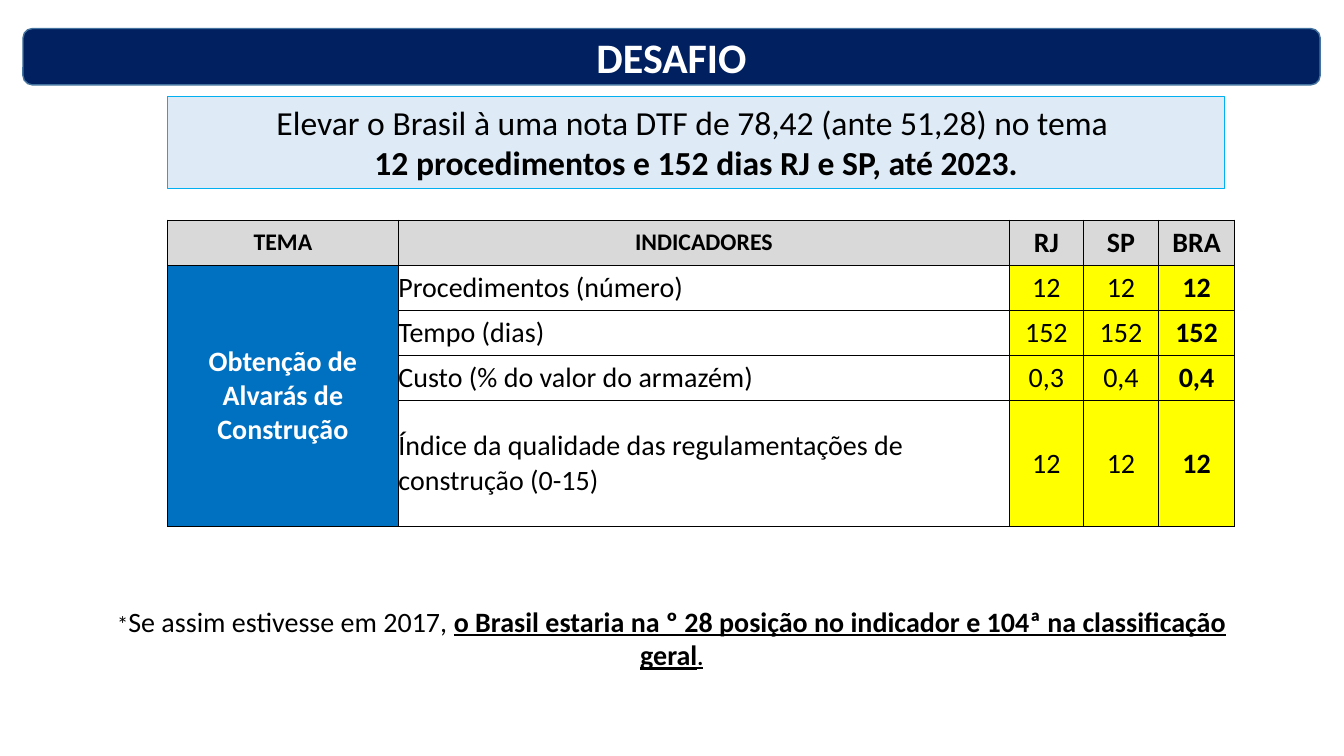
from lxml import etree
from pptx import Presentation
from pptx.dml.color import RGBColor
from pptx.enum import shapes, text
from pptx.oxml.ns import qn
from pptx.util import Cm, Pt

FONT = "Calibri"
BLACK = RGBColor(0x00, 0x00, 0x00)
WHITE = RGBColor(0xFF, 0xFF, 0xFF)
NAVY = RGBColor(0x00, 0x20, 0x60)
STEEL = RGBColor(0x43, 0x73, 0x9E)
PALE_BLUE = RGBColor(0xDE, 0xEB, 0xF7)
SKY = RGBColor(0x00, 0xB0, 0xF0)
BLUE = RGBColor(0x00, 0x70, 0xC0)
GREY = RGBColor(0xD9, 0xD9, 0xD9)
YELLOW = RGBColor(0xFF, 0xFF, 0x00)

COLUMN_WIDTHS = (5.82, 15.4, 1.86, 1.9, 1.91)
ROW_HEIGHTS = (1.14, 1.14, 1.14, 1.14, 3.17)
HEADINGS = ("TEMA", "INDICADORES", "RJ", "SP", "BRA")
THEME = "Obtenção de Alvarás de Construção"
INDICATORS = (
    ("Procedimentos (número)", "12", "12", "12"),
    ("Tempo (dias)", "152", "152", "152"),
    ("Custo (% do valor do armazém)", "0,3", "0,4", "0,4"),
    ("Índice da qualidade das regulamentações de construção (0-15)", "12", "12", "12"),
)


def add_run(paragraph, words, size, color=BLACK, bold=False, underline=False):
    run = paragraph.add_run()
    run.text = words
    font = run.font
    font.name, font.size, font.bold = FONT, Pt(size), bold
    font.color.rgb = color
    if underline:
        font.underline = True


def add_panel(slide, box, preset, fill, line=None, line_width=1):
    panel = slide.shapes.add_shape(preset, *map(Cm, box))
    panel.shadow.inherit = False
    panel.fill.solid()
    panel.fill.fore_color.rgb = fill
    if line is None:
        panel.line.fill.background()
    else:
        panel.line.color.rgb = line
        panel.line.width = Pt(line_width)
    panel.text_frame.word_wrap = True
    return panel


def add_banner(slide, box):
    """Draw the rounded bar and set the slide title in front of it."""
    bar = add_panel(slide, box, shapes.MSO_SHAPE.ROUNDED_RECTANGLE, NAVY, STEEL)
    title = slide.shapes.title
    bar._element.addnext(title._element)
    title.left, title.top, title.width, title.height = map(Cm, box)
    frame = title.text_frame
    frame.auto_size = text.MSO_AUTO_SIZE.NONE
    frame.vertical_anchor = text.MSO_ANCHOR.MIDDLE
    frame.margin_top = frame.margin_bottom = 0
    heading = frame.paragraphs[0]
    heading.alignment = text.PP_ALIGN.CENTER
    add_run(heading, "DESAFIO", 30, WHITE, bold=True)


def add_goal(slide, box):
    goal = add_panel(slide, box, shapes.MSO_SHAPE.RECTANGLE, PALE_BLUE, SKY, 0.75)
    frame = goal.text_frame
    frame.vertical_anchor = text.MSO_ANCHOR.TOP
    score, target = frame.paragraphs[0], frame.add_paragraph()
    score.alignment = target.alignment = text.PP_ALIGN.CENTER
    add_run(score, "Elevar o Brasil à uma nota DTF de 78,42 (ante 51,28) no tema ", 24)
    add_run(target, "12 procedimentos e 152 dias RJ e SP, até 2023.", 24, bold=True)


def set_borders(cell):
    properties = cell._tc.get_or_add_tcPr()
    for side in ("a:lnL", "a:lnR", "a:lnT", "a:lnB"):
        border = etree.SubElement(properties, qn(side), w=str(Pt(0.5)))
        fill = etree.SubElement(border, qn("a:solidFill"))
        etree.SubElement(fill, qn("a:srgbClr"), val=str(BLACK))


def fill_cell(cell, words, size=20, color=BLACK, bold=False, fill=None,
              align=text.PP_ALIGN.CENTER):
    cell.margin_left = cell.margin_right = cell.margin_top = cell.margin_bottom = 0
    cell.vertical_anchor = text.MSO_ANCHOR.MIDDLE
    set_borders(cell)
    if fill is None:
        cell.fill.background()
    else:
        cell.fill.solid()
        cell.fill.fore_color.rgb = fill
    if words:
        paragraph = cell.text_frame.paragraphs[0]
        paragraph.alignment = align
        add_run(paragraph, words, size, color, bold)


def add_indicators(slide, left, top):
    table = slide.shapes.add_table(
        len(ROW_HEIGHTS), len(COLUMN_WIDTHS), Cm(left), Cm(top),
        Cm(sum(COLUMN_WIDTHS)), Cm(sum(ROW_HEIGHTS))).table
    table.first_row = table.horz_banding = False
    for column, width in zip(table.columns, COLUMN_WIDTHS):
        column.width = Cm(width)
    for row, height in zip(table.rows, ROW_HEIGHTS):
        row.height = Cm(height)

    for c, heading in enumerate(HEADINGS):
        fill_cell(table.cell(0, c), heading, 17 if c < 2 else 20, bold=True, fill=GREY)
    for r, (indicator, *values) in enumerate(INDICATORS, 1):
        fill_cell(table.cell(r, 0), THEME if r == 1 else "", color=WHITE, bold=True, fill=BLUE)
        fill_cell(table.cell(r, 1), indicator, align=text.PP_ALIGN.LEFT)
        for c, value in enumerate(values, 2):
            fill_cell(table.cell(r, c), value, bold=HEADINGS[c] == "BRA", fill=YELLOW)
    table.cell(1, 0).merge(table.cell(len(INDICATORS), 0))


def add_footnote(slide, box):
    note = add_panel(slide, box, shapes.MSO_SHAPE.RECTANGLE, WHITE)
    note.text_frame.vertical_anchor = text.MSO_ANCHOR.TOP
    paragraph = note.text_frame.paragraphs[0]
    paragraph.alignment = text.PP_ALIGN.CENTER
    add_run(paragraph, "*", 16)
    add_run(paragraph, "Se assim estivesse em 2017, ", 20)
    add_run(paragraph, "o Brasil estaria na º 28 posição no indicador e 104ª "
            "na classificação geral", 20, bold=True, underline=True)
    add_run(paragraph, ".", 16, bold=True, underline=True)


def main():
    deck = Presentation()
    deck.slide_width, deck.slide_height = Cm(33.87), Cm(19.05)
    slide = deck.slides.add_slide(deck.slide_layouts[5])
    add_banner(slide, (0.58, 0.72, 32.69, 1.42))
    add_goal(slide, (4.22, 2.44, 26.65, 2.31))
    add_footnote(slide, (2.21, 15.1, 29.44, 1.96))
    add_indicators(slide, 4.22, 5.54)
    deck.save("out.pptx")


if __name__ == "__main__":
    main()
